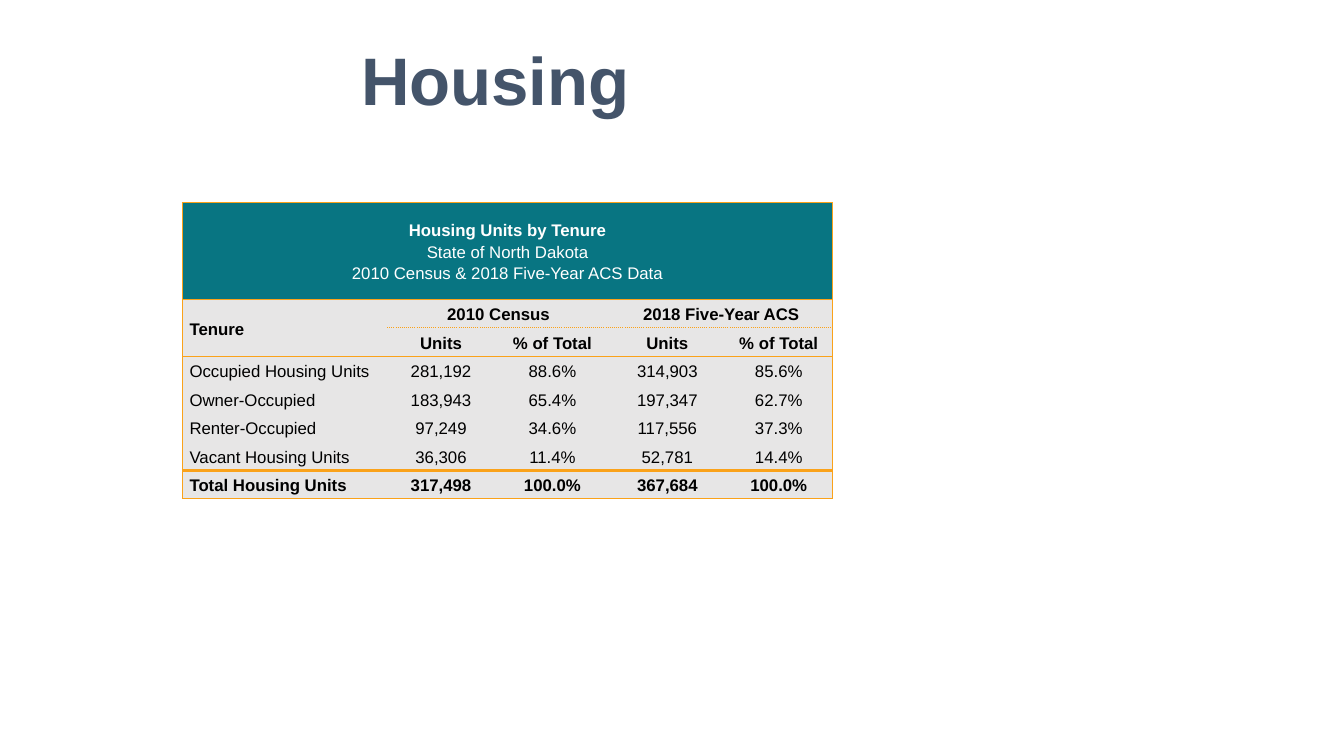
import pptx
import pptx.dml.color
import pptx.enum.text
import pptx.oxml.ns
import pptx.util
from lxml import etree
from pptx.util import Inches

RGBColor = pptx.dml.color.RGBColor
PP_ALIGN = pptx.enum.text.PP_ALIGN
MSO_ANCHOR = pptx.enum.text.MSO_ANCHOR
qn = pptx.oxml.ns.qn

SLATE = RGBColor(0x44, 0x54, 0x6A)
TEAL = RGBColor(0x08, 0x75, 0x82)
GRAY = RGBColor(0xE7, 0xE6, 0xE6)
ORANGE = RGBColor(0xFA, 0xA2, 0x1A)
WHITE = RGBColor(0xFF, 0xFF, 0xFF)
BLACK = RGBColor(0x00, 0x00, 0x00)
FONT = "Arial"

COLUMN_WIDTHS = [2.03, 1.07, 1.14, 1.14, 1.07]
HEADER_HEIGHT = 0.96
TABLE_HEIGHT = 2.94
HEADING = "Housing Units by Tenure\nState of North Dakota\n2010 Census & 2018 Five-Year ACS Data"
ROWS = [
    [HEADING, "", "", "", ""],
    ["Tenure", "2010 Census", "", "2018 Five-Year ACS", ""],
    ["", "Units", "% of Total", "Units", "% of Total"],
    ["Occupied Housing Units", "281,192", "88.6%", "314,903", "85.6%"],
    ["Owner-Occupied", "183,943", "65.4%", "197,347", "62.7%"],
    ["Renter-Occupied", "97,249", "34.6%", "117,556", "37.3%"],
    ["Vacant Housing Units", "36,306", "11.4%", "52,781", "14.4%"],
    ["Total Housing Units", "317,498", "100.0%", "367,684", "100.0%"],
]
BOLD_ROWS = {1, 2, 7}
# First and last cell of each merged area, as (row, column)
MERGES = [((0, 0), (0, 4)), ((1, 0), (2, 0)), ((1, 1), (1, 2)), ((1, 3), (1, 4))]
# Horizontal rules: row boundary -> (width in points, dash)
RULES = {0: (1, "solid"), 1: (1, "solid"), 2: (1, "sysDot"), 3: (1, "solid"),
         7: (2.25, "solid"), 8: (1, "solid")}


def set_font(p, size, color, bold):
    p.font.name = FONT
    p.font.size = pptx.util.Pt(size)
    p.font.color.rgb = color
    p.font.bold = bold


def add_title(slide, text, left, top, width, height):
    tf = slide.shapes.add_textbox(Inches(left), Inches(top), Inches(width), Inches(height)).text_frame
    tf.word_wrap = True
    tf.vertical_anchor = MSO_ANCHOR.MIDDLE
    p = tf.paragraphs[0]
    p.text = text
    p.alignment = PP_ALIGN.CENTER
    set_font(p, 48, SLATE, True)


def add_border(cell, side, rule):
    """Draw one side ("L", "R", "T" or "B"), or clear it if rule is None."""
    ln = etree.SubElement(cell._tc.get_or_add_tcPr(), qn("a:ln" + side))
    if rule is None:
        etree.SubElement(ln, qn("a:noFill"))
        return
    width, dash = rule
    ln.set("w", str(pptx.util.Pt(width)))
    fill = etree.SubElement(ln, qn("a:solidFill"))
    etree.SubElement(fill, qn("a:srgbClr")).set("val", str(ORANGE))
    etree.SubElement(ln, qn("a:prstDash")).set("val", dash)


def add_borders(cell, row, col):
    outline = (1, "solid")
    bottom = row + (cell.span_height if cell.is_merge_origin else 1)
    right = col + (cell.span_width if cell.is_merge_origin else 1)
    add_border(cell, "L", outline if col == 0 else None)
    add_border(cell, "R", outline if right == len(COLUMN_WIDTHS) else None)
    for side, boundary in (("T", row), ("B", bottom)):
        inside_tenure = boundary == 2 and col == 0
        add_border(cell, side, None if inside_tenure else RULES.get(boundary))


def fill_cell(cell, row, col, text):
    add_borders(cell, row, col)
    cell.fill.solid()
    cell.fill.fore_color.rgb = TEAL if row == 0 else GRAY
    cell.margin_left = cell.margin_right = Inches(0.07)
    cell.margin_top = cell.margin_bottom = 0
    cell.vertical_anchor = MSO_ANCHOR.MIDDLE
    cell.text = text
    for i, p in enumerate(cell.text_frame.paragraphs):
        p.alignment = PP_ALIGN.CENTER if row == 0 or col > 0 else PP_ALIGN.LEFT
        p.line_spacing = 1.15
        bold = i == 0 if row == 0 else row in BOLD_ROWS
        set_font(p, 12, WHITE if row == 0 else BLACK, bold)


def add_tenure_table(slide, left, top):
    table = slide.shapes.add_table(
        len(ROWS), len(COLUMN_WIDTHS), Inches(left), Inches(top),
        Inches(sum(COLUMN_WIDTHS)), Inches(TABLE_HEIGHT)).table
    table.horz_banding = False
    for column, width in zip(table.columns, COLUMN_WIDTHS):
        column.width = Inches(width)
    row_height = (TABLE_HEIGHT - HEADER_HEIGHT) / (len(ROWS) - 1)
    for i, row in enumerate(table.rows):
        row.height = Inches(row_height if i else HEADER_HEIGHT)
    for first, last in MERGES:
        table.cell(*first).merge(table.cell(*last))
    for r, texts in enumerate(ROWS):
        for c, text in enumerate(texts):
            fill_cell(table.cell(r, c), r, c, text)


def main():
    prs = pptx.Presentation()
    prs.slide_width = Inches(13.33)
    prs.slide_height = Inches(7.5)
    slide = prs.slides.add_slide(prs.slide_layouts[6])
    add_title(slide, "Housing", 0.28, 0.33, 9.27, 0.9)
    add_tenure_table(slide, 1.81, 2.01)
    prs.save("out.pptx")


if __name__ == "__main__":
    main()
